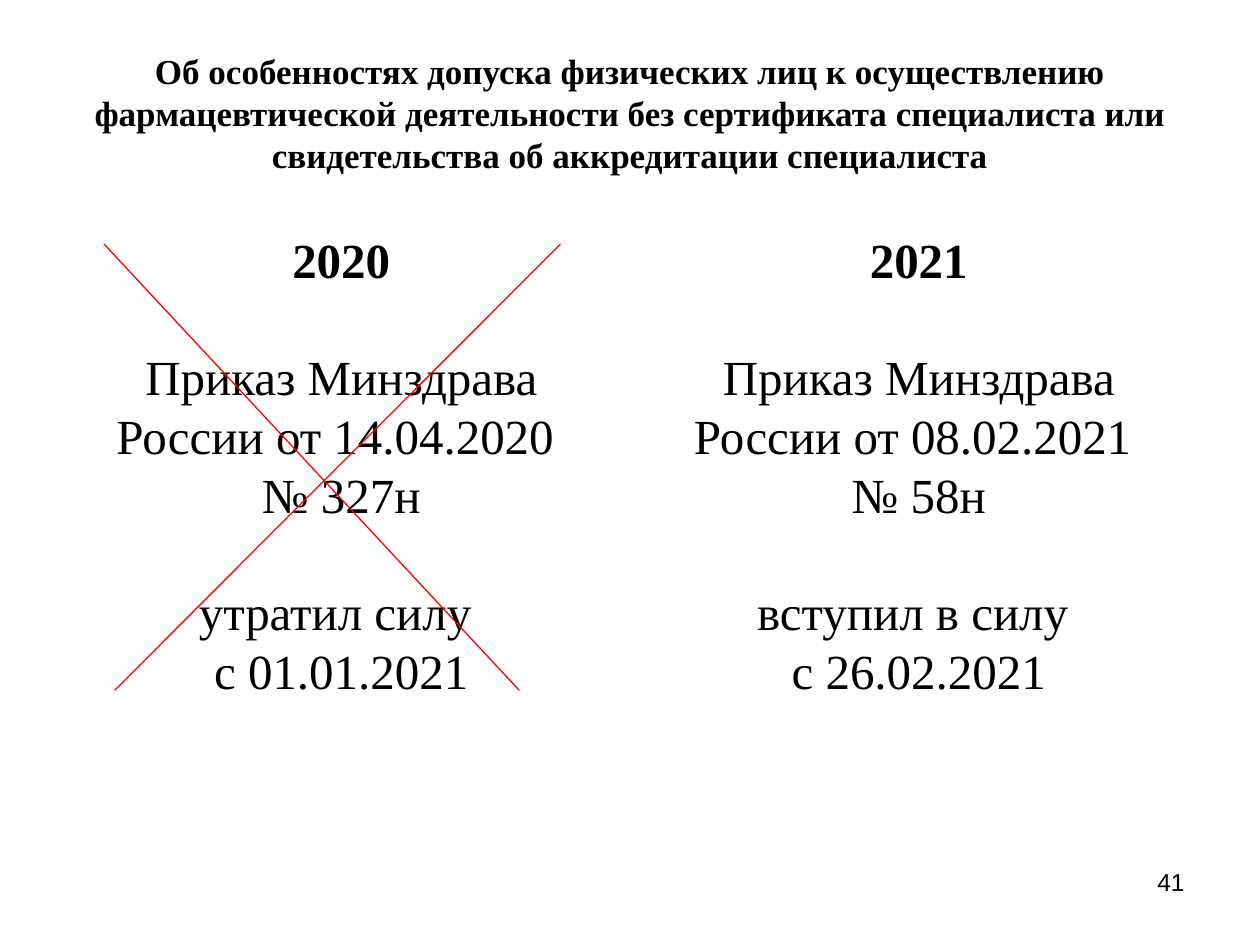
from dataclasses import dataclass

from lxml import etree
from pptx import Presentation
from pptx.dml.color import RGBColor
from pptx.enum import shapes, text
from pptx.oxml import ns
from pptx.util import Pt


@dataclass(frozen=True)
class Theme:
    ink: RGBColor = RGBColor(0, 0, 0)
    cross: RGBColor = RGBColor(255, 0, 0)
    paper: RGBColor = RGBColor(255, 255, 255)
    serif: str = "Times New Roman"
    sans: str = "Arial"
    title_size: float = 20
    body_size: float = 28
    number_size: float = 14
    leading: float = 1.2
    rule: float = 0.75


THEME = Theme()


def add_text(page, box, lines, font, size, align, anchor=text.MSO_ANCHOR.TOP):
    frame = page.shapes.add_textbox(*map(Pt, box)).text_frame
    frame.word_wrap = True
    frame.vertical_anchor = anchor
    frame.text = "\n".join(lines)
    for para in frame.paragraphs:
        para.alignment = align
        para.line_spacing = Pt(size * THEME.leading)
        para.font.name = font
        para.font.size = Pt(size)
        para.font.color.rgb = THEME.ink
        for span in para.runs:
            span.font.name = font
            span.font.size = Pt(size)
            span.font.color.rgb = THEME.ink
    return frame


def add_title(page, box, title):
    frame = add_text(page, box, [title], THEME.serif, THEME.title_size,
                     text.PP_ALIGN.CENTER, text.MSO_ANCHOR.MIDDLE)
    frame.margin_bottom = Pt(8)
    frame.paragraphs[0].runs[0].font.bold = True


def add_year_column(page, box, year, order, status):
    frame = add_text(page, box, [year, *order, *status], THEME.serif,
                     THEME.body_size, text.PP_ALIGN.CENTER)
    frame.margin_top = Pt(5)
    frame.paragraphs[0].runs[0].font.bold = True
    for start in (1, 1 + len(order)):
        frame.paragraphs[start].space_before = Pt(THEME.body_size * THEME.leading)


def add_cross(page, box):
    left, top, width, height = box
    right, bottom = left + width, top + height
    strokes = [
        (left, top, right - 23.5, bottom),
        (left + 6, bottom, right, top),
    ]
    for ends in strokes:
        stroke = page.shapes.add_connector(
            shapes.MSO_CONNECTOR.STRAIGHT, *map(Pt, ends))
        stroke.line.color.rgb = THEME.cross
        stroke.line.width = Pt(THEME.rule)
        etree.SubElement(stroke._element.spPr, ns.qn("a:effectLst"))


def add_page_number(page, box, number):
    add_text(page, box, [number], THEME.sans, THEME.number_size,
             text.PP_ALIGN.RIGHT)


def main():
    deck = Presentation()
    deck.slide_width, deck.slide_height = Pt(720), Pt(540)
    page = deck.slides.add_slide(deck.slide_layouts[6])
    page.background.fill.solid()
    page.background.fill.fore_color.rgb = THEME.paper

    margin, gap = 36, 12
    content = 720 - 2 * margin
    add_title(page, (margin, 21.6, content, 90),
              "Об особенностях допуска физических лиц к осуществлению "
              "фармацевтической деятельности без сертификата специалиста "
              "или свидетельства об аккредитации специалиста")

    columns = [
        ("2020", ["Приказ Минздрава России от 14.04.2020 ", "№ 327н"],
         ["утратил силу ", "с 01.01.2021"]),
        ("2021", ["Приказ Минздрава России от 08.02.2021 ", "№ 58н"],
         ["вступил в силу ", "с 26.02.2021"]),
    ]
    width = (content - gap) / 2
    for index, column in enumerate(columns):
        left = margin + index * (width + gap)
        add_year_column(page, (left, 126, width, 356.4), *column)

    add_page_number(page, (516, 492, 168, 37.5), "41")
    add_cross(page, (59.5, 139.5, 260.75, 255))
    deck.save("out.pptx")


if __name__ == "__main__":
    main()
